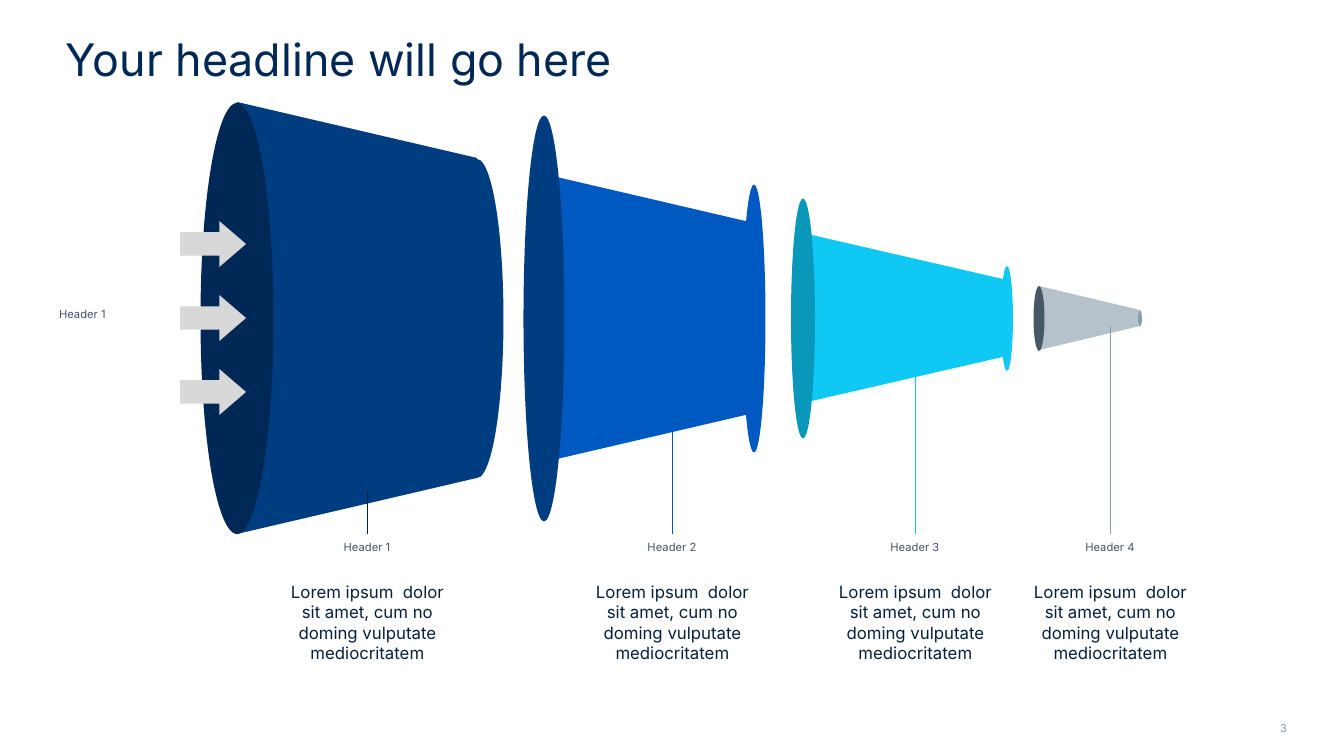
from lxml.etree import SubElement
from pptx import Presentation
from pptx.dml.color import RGBColor
from pptx.enum.shapes import MSO_CONNECTOR, MSO_SHAPE
from pptx.enum.text import MSO_ANCHOR, PP_ALIGN
from pptx.oxml.ns import qn
from pptx.util import Pt

NAVY = RGBColor(0x00, 0x28, 0x56)
DEEP_BLUE = RGBColor(0x00, 0x3C, 0x80)
BLUE = RGBColor(0x00, 0x59, 0xC0)
TEAL = RGBColor(0x09, 0x98, 0xBA)
CYAN = RGBColor(0x0F, 0xC9, 0xF4)
SLATE = RGBColor(0x46, 0x58, 0x66)
STEEL = RGBColor(0x88, 0x9D, 0xAC)
SILVER = RGBColor(0xB6, 0xC2, 0xCB)
LIGHT_GREY = RGBColor(0xD8, 0xD8, 0xD8)
HEADER_GREY = RGBColor(0x46, 0x53, 0x68)
INK = RGBColor(0x05, 0x20, 0x3A)

EMU_PER_PX = 914400 / 100.8
AXIS = 318
HEADER_TOP = 534
DESCRIPTION = "Lorem ipsum  dolor sit amet, cum no doming vulputate mediocritatem"


def px(length):
    return round(length * EMU_PER_PX)


class FunnelPage:
    font_name = "Inter"

    def __init__(self, deck):
        self.page = deck.slides.add_slide(deck.slide_layouts[5])
        self.shapes = self.page.shapes

    def paint(self, shape, color):
        shape.shadow.inherit = False
        shape.fill.solid()
        shape.fill.fore_color.rgb = color
        shape.line.fill.background()

    def set_text(self, box, words, size, color, align, anchor, inset):
        frame = box.text_frame
        frame.word_wrap = True
        frame.vertical_anchor = anchor
        frame.margin_left = frame.margin_right = px(inset)
        frame.margin_top = frame.margin_bottom = px(min(inset, 6))
        frame.text = words
        para = frame.paragraphs[0]
        para.alignment = align
        para.font.name = self.font_name
        para.font.size = Pt(size)
        para.font.color.rgb = color

    def title(self, words, left, top, width, height):
        box = self.shapes.title
        box.left, box.top, box.width, box.height = map(px, (left, top, width, height))
        self.set_text(box, words, 32, NAVY, PP_ALIGN.LEFT, MSO_ANCHOR.TOP, 10)

    def text(self, words, left, top, width, height, size, color,
             align=PP_ALIGN.CENTER, anchor=MSO_ANCHOR.TOP, inset=10):
        box = self.shapes.add_textbox(*map(px, (left, top, width, height)))
        self.set_text(box, words, size, color, align, anchor, inset)
        return box

    def header(self, words, left, top, align=PP_ALIGN.CENTER):
        return self.text(words, left, top, 134, 26, 8, HEADER_GREY,
                         align, MSO_ANCHOR.MIDDLE, 6)

    def ellipse(self, center, width, height, color):
        shape = self.shapes.add_shape(
            MSO_SHAPE.OVAL, px(center - width / 2), px(AXIS + 0.5 - height / 2),
            px(width), px(height))
        self.paint(shape, color)

    def cone(self, left, left_height, right, right_height, color):
        corners = [(left, AXIS + left_height / 2), (right, AXIS + right_height / 2),
                   (right, AXIS - right_height / 2)]
        outline = self.shapes.build_freeform(left, AXIS - left_height / 2, EMU_PER_PX)
        outline.add_line_segments(corners, close=True)
        self.paint(outline.convert_to_shape(), color)

    def arrow(self, left, top, width, height):
        shape = self.shapes.add_shape(
            MSO_SHAPE.RIGHT_ARROW, *map(px, (left, top, width, height)))
        shape.adjustments[0] = 0.51
        shape.adjustments[1] = 0.58
        self.paint(shape, LIGHT_GREY)

    def leader(self, header, center, end, color):
        line = self.shapes.add_connector(
            MSO_CONNECTOR.STRAIGHT, px(center), px(HEADER_TOP), px(center), px(end))
        line.begin_connect(header, 0)
        line.line.color.rgb = color
        line.line.width = Pt(0.5)
        SubElement(line._element.spPr, qn("a:effectLst"))


def main():
    deck = Presentation()
    deck.slide_width, deck.slide_height = px(1344), px(756)
    funnel = FunnelPage(deck)
    funnel.title("Your headline will go here", 56, 26, 1230, 59)
    funnel.text("3", 1241, 715, 56, 24, 8, STEEL, PP_ALIGN.RIGHT)

    stages = [
        ((1039, 65, 1140, 16, SILVER), (11, 65, SLATE), (4, 16, STEEL)),
        ((803, 170, 1007, 75, CYAN), (24, 240, TEAL), (12, 105, CYAN)),
        ((544, 288, 754, 190, BLUE), (41, 406, DEEP_BLUE), (23, 268, BLUE)),
        ((237, 431, 477, 319, DEEP_BLUE), (73, 431, NAVY), (53, 319, DEEP_BLUE)),
    ]
    for cone, mouth, rim in stages:
        funnel.cone(*cone)
        funnel.ellipse(cone[0], *mouth)
        funnel.ellipse(cone[2], *rim)

    for row in range(3):
        funnel.arrow(180, 221 + 74 * row, 66, 46)
    funnel.header("Header 1", 53, 301, PP_ALIGN.LEFT)

    labels = [(367, 491, INK), (672, 415, BLUE), (915, 351, CYAN), (1110, 326, STEEL)]
    for number, (center, end, color) in enumerate(labels, 1):
        header = funnel.header(f"Header {number}", center - 67, HEADER_TOP)
        funnel.text(DESCRIPTION, center - 88, 576, 177, 118, 12, INK)
        funnel.leader(header, center, end, color)

    deck.save("out.pptx")


if __name__ == "__main__":
    main()
